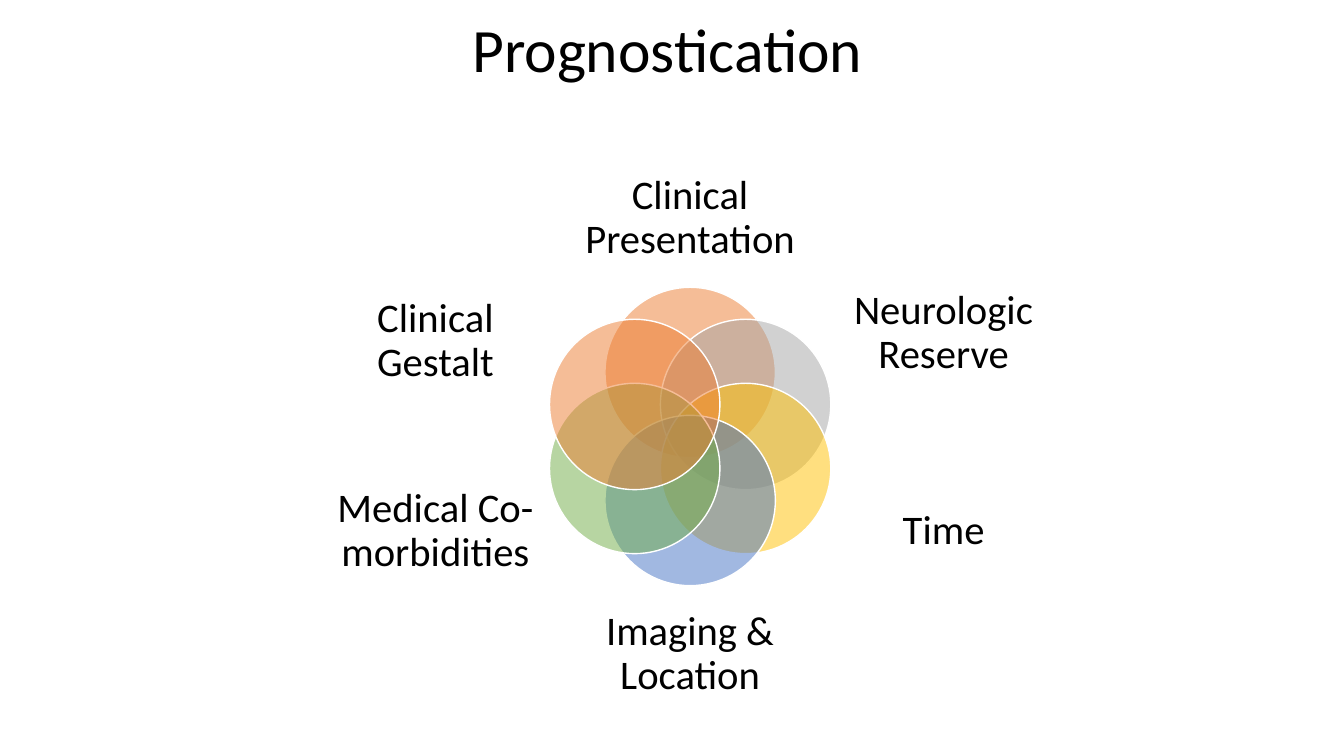
import math

import pptx
import pptx.dml.color
import pptx.enum.shapes
import pptx.enum.text
import pptx.util
from lxml import etree
from pptx.oxml.ns import qn

Inches = pptx.util.Inches
RGBColor = pptx.dml.color.RGBColor
Anchor = pptx.enum.text.MSO_ANCHOR

BLACK = RGBColor(0x00, 0x00, 0x00)
WHITE = RGBColor(0xFF, 0xFF, 0xFF)
ORANGE = RGBColor(0xED, 0x7D, 0x31)
GRAY = RGBColor(0xA5, 0xA5, 0xA5)
GOLD = RGBColor(0xFF, 0xC0, 0x00)
BLUE = RGBColor(0x44, 0x72, 0xC4)
GREEN = RGBColor(0x70, 0xAD, 0x47)

RING_CENTER = (6.845, 4.33)
RING_RADIUS = 0.635
CIRCLE_SIZE = 1.69

# Clockwise from the top: label, circle colour, label box (left, top, width, height)
FACTORS = [
    ("Clinical Presentation", ORANGE, (5.79, 1.59, 2.11, 1.15)),
    ("Neurologic Reserve", GRAY, (8.36, 2.68, 2, 1.26)),
    ("Time", GOLD, (8.36, 4.57, 2, 1.41)),
    ("Imaging & Location", BLUE, (5.79, 5.92, 2.11, 1.15)),
    ("Medical Co-morbidities", GREEN, (3.32, 4.57, 2, 1.41)),
    ("Clinical Gestalt", ORANGE, (3.32, 2.68, 2, 1.41)),
]


def set_all(target, values):
    for name, value in values.items():
        setattr(target, name, value)


class VennSlide:
    """Holds the text style and the slide being drawn."""

    font = {"name": "Calibri"}
    paragraph = {"alignment": pptx.enum.text.PP_ALIGN.CENTER, "line_spacing": 0.9}

    def __init__(self, presentation):
        self.slide = presentation.slides.add_slide(presentation.slide_layouts[5])

    def fill_text(self, frame, text, size, frame_format):
        set_all(frame, {"word_wrap": True, "auto_size": pptx.enum.text.MSO_AUTO_SIZE.NONE,
                        **frame_format})
        line = frame.paragraphs[0]
        set_all(line, self.paragraph)
        run = line.add_run()
        run.text = text
        set_all(run.font, {**self.font, "size": pptx.util.Pt(size)})
        run.font.color.rgb = BLACK

    def title(self, text, box):
        heading = self.slide.shapes.title
        set_all(heading, dict(zip(("left", "top", "width", "height"), map(Inches, box))))
        self.fill_text(heading.text_frame, text, 44, {"vertical_anchor": Anchor.TOP})

    def label(self, text, box):
        caption = self.slide.shapes.add_textbox(*map(Inches, box))
        margins = dict.fromkeys(
            ("margin_left", "margin_top", "margin_right", "margin_bottom"), 0)
        self.fill_text(caption.text_frame, text, 29,
                       {"vertical_anchor": Anchor.MIDDLE, **margins})

    def circle(self, center_x, center_y, color):
        """Add a half-transparent circle with a white outline."""
        disc = self.slide.shapes.add_shape(
            pptx.enum.shapes.MSO_SHAPE.OVAL,
            Inches(center_x - CIRCLE_SIZE / 2), Inches(center_y - CIRCLE_SIZE / 2),
            Inches(CIRCLE_SIZE), Inches(CIRCLE_SIZE))
        disc.shadow.inherit = False
        disc.fill.solid()
        disc.fill.fore_color.rgb = color
        fill_color = disc._element.spPr.find(qn("a:solidFill")).find(qn("a:srgbClr"))
        etree.SubElement(fill_color, qn("a:alpha"), val="50000")
        disc.line.color.rgb = WHITE
        disc.line.width = pptx.util.Pt(1)


def main():
    presentation = pptx.Presentation()
    set_all(presentation, {"slide_width": Inches(13.33), "slide_height": Inches(7.5)})
    venn = VennSlide(presentation)
    venn.title("Prognostication", (0.87, 0.14, 11.5, 1.45))
    for step, (factor, color, label_box) in enumerate(FACTORS):
        angle = math.radians(step * 360 / len(FACTORS))
        venn.circle(RING_CENTER[0] + RING_RADIUS * math.sin(angle),
                    RING_CENTER[1] - RING_RADIUS * math.cos(angle), color)
        venn.label(factor, label_box)
    presentation.save("out.pptx")


if __name__ == "__main__":
    main()
